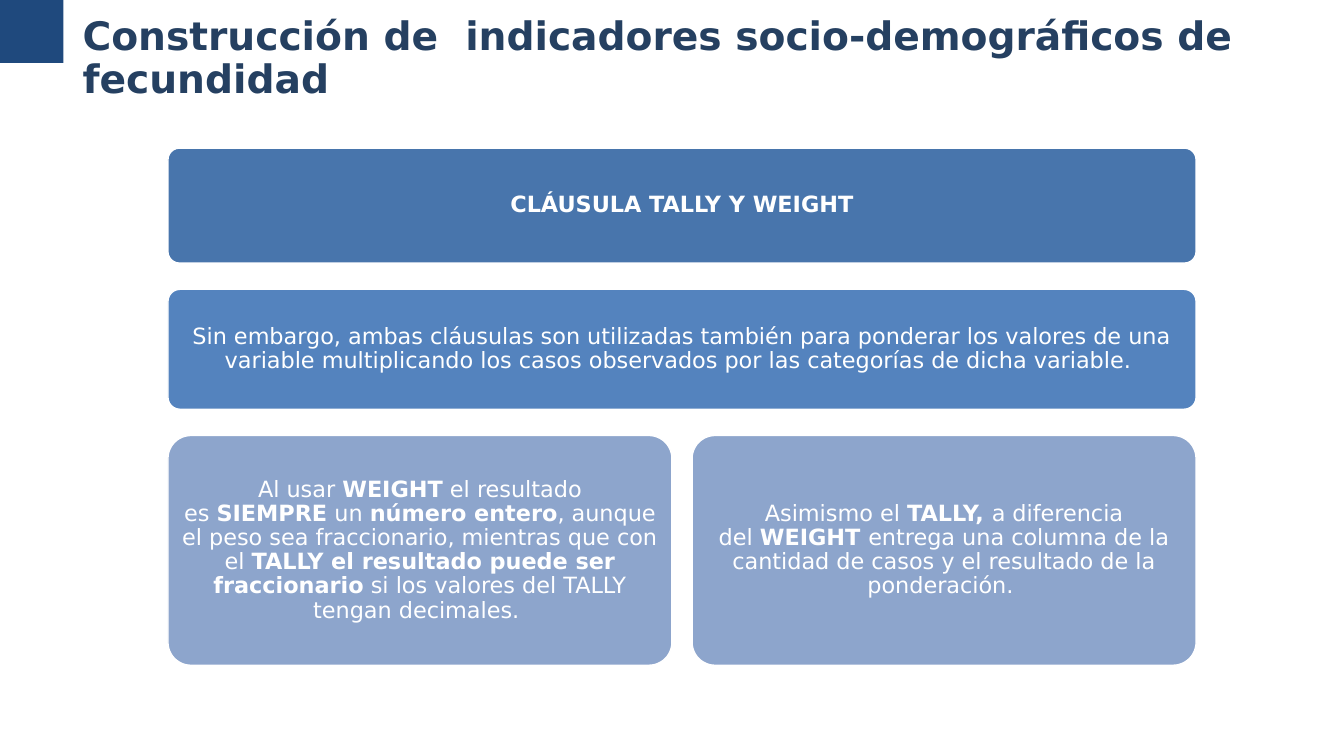
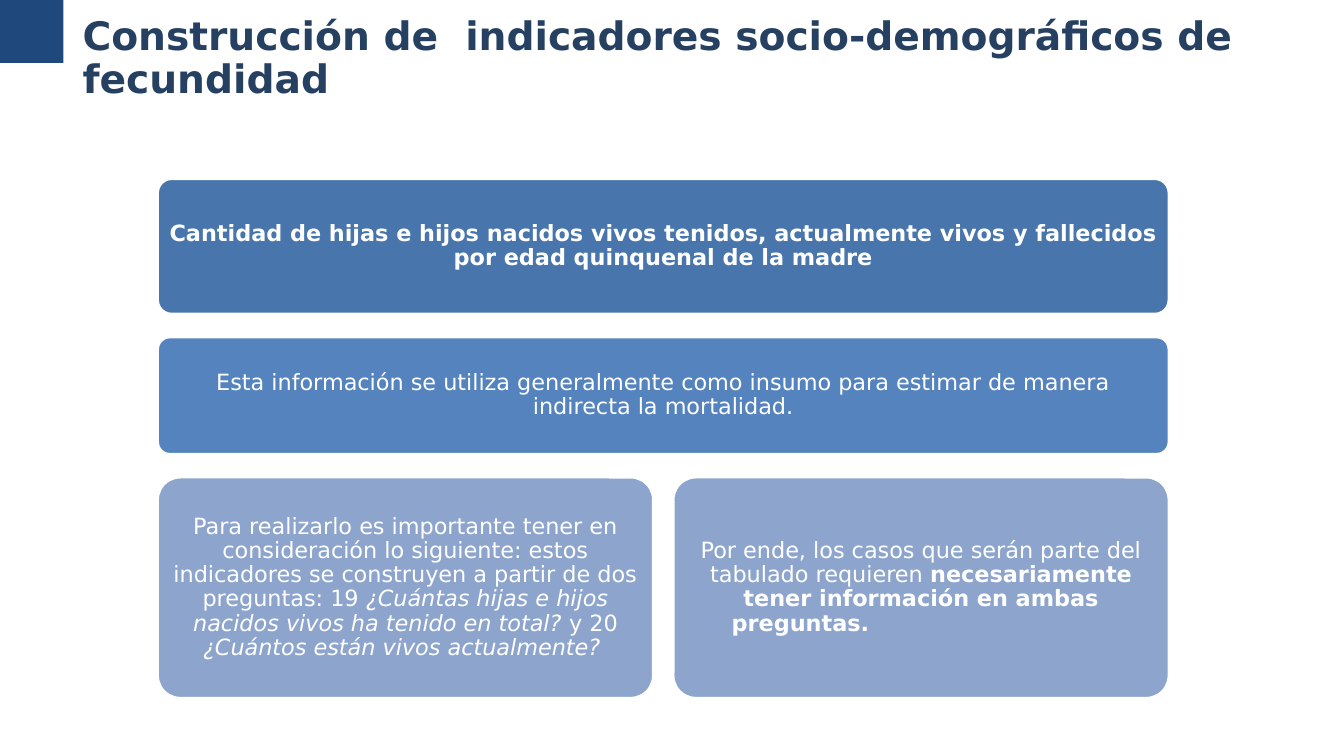
from dataclasses import dataclass

from pptx import Presentation
from pptx.dml.color import RGBColor
from pptx.enum.shapes import MSO_SHAPE
from pptx.enum.text import MSO_ANCHOR, PP_ALIGN
from pptx.util import Inches, Pt

RECTANGLE = MSO_SHAPE.RECTANGLE
ROUNDED = MSO_SHAPE.ROUNDED_RECTANGLE
MIDDLE = MSO_ANCHOR.MIDDLE
LEFT, CENTER = PP_ALIGN.LEFT, PP_ALIGN.CENTER
BLANK_LAYOUT = 6
COLUMNS, ROWS = 40, 30
PLAIN, BOLD, ITALIC = "plain", "bold", "italic"
TIE, NO_BREAK_SPACE = "~", chr(160)


@dataclass(frozen=True)
class Theme:
    font: str = "DejaVu Sans"
    title_size: int = 28
    body_size: int = 16
    line_spacing: float = 0.9
    inset: float = 0.07
    corner_radius: float = 0.1
    title: str = "254061"
    corner: str = "1F497D"
    white: str = "FFFFFF"
    tiers: tuple = ("4875AC", "5483BE", "8DA5CC")


class Deck:
    def __init__(self, theme):
        self.theme = theme
        self.presentation = Presentation()
        self.presentation.slide_width = Inches(40 / 3)
        self.presentation.slide_height = Inches(7.5)
        self.column = self.presentation.slide_width / COLUMNS
        self.row = self.presentation.slide_height / ROWS
        self.slide = None

    def box(self, left, top, width, height):
        return (round(left * self.column), round(top * self.row),
                round(width * self.column), round(height * self.row))

    def add_slide(self, title):
        layout = self.presentation.slide_layouts[BLANK_LAYOUT]
        self.slide = self.presentation.slides.add_slide(layout)
        self.shape(RECTANGLE, self.box(0, 0, 1.91, 2.5), self.theme.corner)
        self.shape(RECTANGLE, self.box(1.89, 0, 0.3, 4.48), self.theme.white)
        self.title(title)

    def shape(self, kind, box, color):
        shape = self.slide.shapes.add_shape(kind, *box)
        shape.shadow.inherit = False
        shape.fill.solid()
        shape.fill.fore_color.rgb = RGBColor.from_string(color)
        shape.line.fill.background()
        return shape

    def title(self, text):
        text_frame = self.slide.shapes.add_textbox(*self.box(2.46, 1.28, 36.48, 2.16)).text_frame
        text_frame.word_wrap = True
        text_frame.vertical_anchor = MIDDLE
        text_frame.margin_left = 0
        text_frame.text = text
        paragraph = text_frame.paragraphs[0]
        paragraph.line_spacing = self.theme.line_spacing
        self.format_run(paragraph.runs[0], self.theme.title_size, self.theme.title, BOLD)

    def format_run(self, run, size, color, style):
        run.font.name = self.theme.font
        run.font.size = Pt(size)
        run.font.color.rgb = RGBColor.from_string(color)
        run.font.bold = style == BOLD
        run.font.italic = style == ITALIC

    def paragraph(self, paragraph, parts, indent=None):
        paragraph.alignment = CENTER if indent is None else LEFT
        paragraph.line_spacing = self.theme.line_spacing
        if indent is not None:
            paragraph._p.get_or_add_pPr().set("marL", str(round(indent * self.column)))
        for text, style in parts:
            run = paragraph.add_run()
            run.text = text.replace(TIE, NO_BREAK_SPACE)
            self.format_run(run, self.theme.body_size, self.theme.white, style)

    def tile(self, box, color, parts):
        shape = self.shape(ROUNDED, box, color)
        shape.adjustments[0] = self.theme.corner_radius
        shape.line.color.rgb = RGBColor.from_string(self.theme.white)
        shape.line.width = Pt(1)
        text_frame = shape.text_frame
        text_frame.word_wrap = True
        text_frame.vertical_anchor = MIDDLE
        inset = Inches(self.theme.inset)
        text_frame.margin_left = text_frame.margin_right = inset
        text_frame.margin_top = text_frame.margin_bottom = inset
        self.paragraph(text_frame.paragraphs[0], parts)
        return text_frame

    def hierarchy(self, left, top, width, heights, row_gap, column_gap, tiers):
        text_frames = []
        for height, color, tier in zip(heights, self.theme.tiers, tiers):
            tile_width = (width - column_gap * (len(tier) - 1)) / len(tier)
            for index, parts in enumerate(tier):
                tile_left = left + index * (tile_width + column_gap)
                box = self.box(tile_left, top, tile_width, height)
                text_frames.append(self.tile(box, color, parts))
            top += height + row_gap
        return text_frames


TITLE = "Construcción de  indicadores socio-demográficos de fecundidad"

CLAUSE_TIERS = [
    [[("CLÁUSULA TALLY Y WEIGHT", BOLD)]],
    [[("Sin embargo, ambas cláusulas son utilizadas también para ponderar los valores "
       "de una variable multiplicando los casos observados por las categorías de dicha "
       "variable. ", PLAIN)]],
    [
        [("Al usar~", PLAIN), ("WEIGHT", BOLD), ("~el resultado es~", PLAIN),
         ("SIEMPRE", BOLD), ("~un ", PLAIN), ("número entero", BOLD),
         (", aunque el peso sea fraccionario, mientras que con el~", PLAIN),
         ("TALLY~el resultado puede ser fraccionario", BOLD),
         (" si los valores del TALLY tengan decimales. ", PLAIN)],
        [("Asimismo el~", PLAIN), ("TALLY,~", BOLD), ("a diferencia del~", PLAIN),
         ("WEIGHT ", BOLD),
         ("entrega una columna de la cantidad de casos y el resultado de la "
          "ponderación.~", PLAIN)],
    ],
]

CHILDREN_TIERS = [
    [[("Cantidad de hijas e hijos nacidos vivos tenidos, actualmente vivos y fallecidos "
       "por edad quinquenal de la madre", BOLD)]],
    [[("Esta información se utiliza generalmente como insumo para estimar de manera "
       "indirecta la mortalidad.", PLAIN)]],
    [
        [("Para realizarlo es importante tener en consideración lo siguiente: estos "
          "indicadores se construyen a partir de dos preguntas: 19 ", PLAIN),
         ("¿Cuántas hijas e hijos nacidos vivos ha tenido en total? ", ITALIC),
         ("y 20 ", PLAIN), ("¿Cuántos están vivos actualmente? ", ITALIC)],
        [("Por ende, los casos que serán parte del tabulado requieren ", PLAIN),
         ("necesariamente tener información en ambas", BOLD)],
    ],
]


def main():
    deck = Deck(Theme())

    deck.add_slide(TITLE)
    deck.hierarchy(5, 5.88, 30.6, (4.56, 4.76, 9.12), 1.04, 0.6, CLAUSE_TIERS)

    deck.add_slide(TITLE)
    text_frames = deck.hierarchy(4.71, 7.12, 30.06, (5.32, 4.6, 8.72), 0.96, 0.63,
                                 CHILDREN_TIERS)
    deck.paragraph(text_frames[-1].add_paragraph(), [("preguntas.", BOLD)], indent=1.32)

    deck.presentation.save("out.pptx")


if __name__ == "__main__":
    main()
